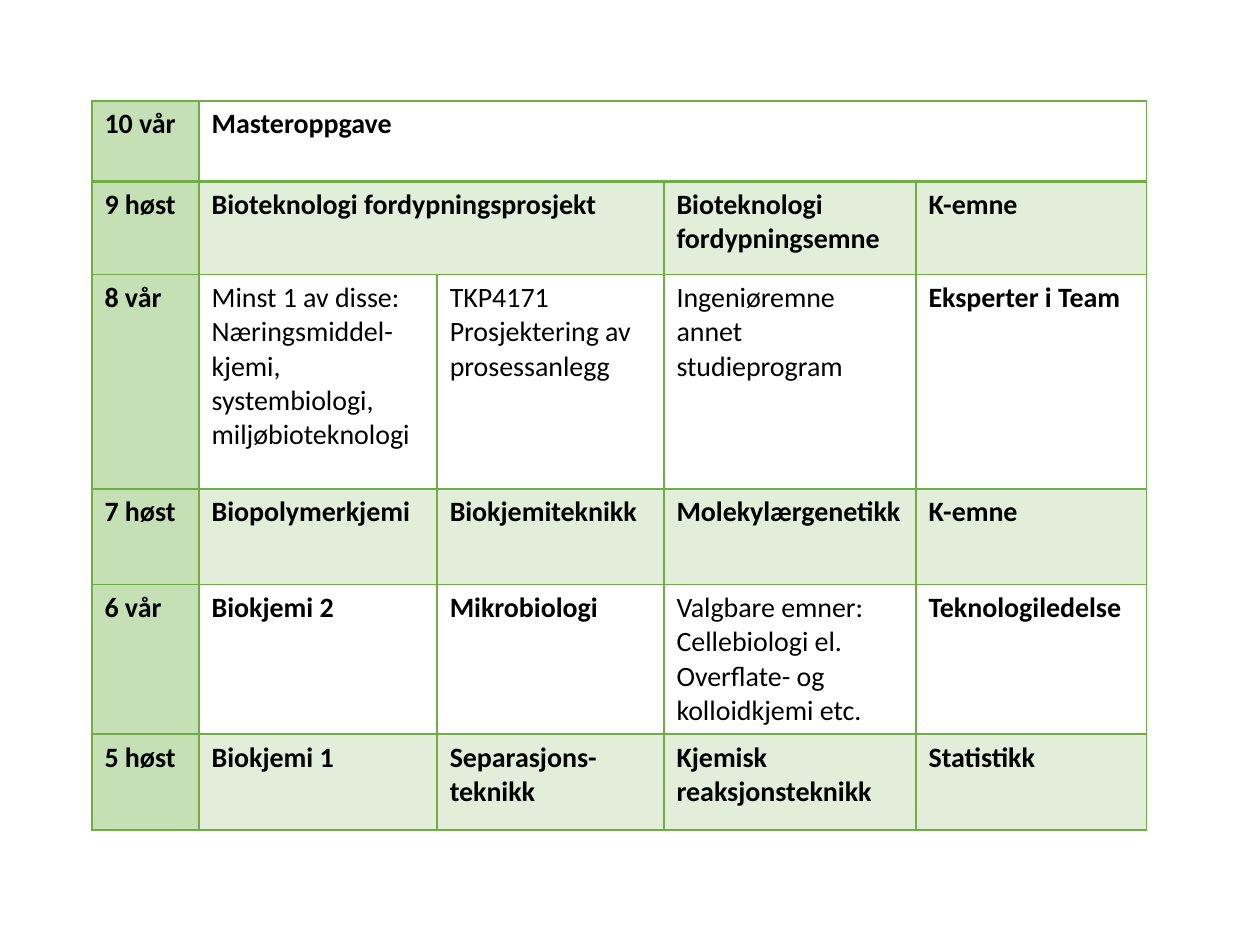
from dataclasses import dataclass

from lxml.etree import SubElement
from pptx import Presentation
from pptx.dml.color import RGBColor
from pptx.oxml.ns import qn
from pptx.util import Inches, Pt


@dataclass(frozen=True)
class Theme:
    font: str = "Calibri"
    size: int = 16
    ink: str = "000000"
    green: str = "70AD47"
    term: str = "C5E0B4"
    tint: int = 20
    thin: int = 1
    thick: int = 2


WIDTHS = [0.85, 1.89, 1.8, 2, 1.83]
PLAN = [
    (0.64, "10 vår", [("Masteroppgave", 4, True)]),
    (0.74, "9 høst", [("Bioteknologi fordypningsprosjekt", 2, True),
                      ("Bioteknologi fordypningsemne", 1, True),
                      ("K-emne", 1, True)]),
    (1.7, "8 vår", [("Minst 1 av disse: Næringsmiddel-kjemi, systembiologi, "
                     "miljøbioteknologi", 1, False),
                    ("TKP4171 Prosjektering av prosessanlegg", 1, False),
                    ("Ingeniøremne annet studieprogram", 1, False),
                    ("Eksperter i Team", 1, True)]),
    (0.76, "7 høst", [("Biopolymerkjemi", 1, True),
                      ("Biokjemiteknikk", 1, True),
                      ("Molekylærgenetikk", 1, True),
                      ("K-emne", 1, True)]),
    (1.18, "6 vår", [("Biokjemi 2", 1, True),
                     ("Mikrobiologi", 1, True),
                     ("Valgbare emner:\nCellebiologi el. Overflate- og "
                      "kolloidkjemi etc.", 1, False),
                     ("Teknologiledelse", 1, True)]),
    (0.76, "5 høst", [("Biokjemi 1", 1, True),
                      ("Separasjons-teknikk", 1, True),
                      ("Kjemisk reaksjonsteknikk", 1, True),
                      ("Statistikk", 1, True)]),
]


class Deck:
    """Hold the theme and the current slide, and draw each kind of element."""

    def __init__(self, theme):
        self.theme = theme
        self.prs = Presentation()
        self.prs.slide_width = Inches(10)
        self.prs.slide_height = Inches(7.5)
        self.slide = self.prs.slides.add_slide(self.prs.slide_layouts[6])

    def label(self, cell, text, bold):
        """Set each line of text as a paragraph with one run."""
        frame = cell.text_frame
        for num, line in enumerate(text.split("\n")):
            para = frame.add_paragraph() if num else frame.paragraphs[0]
            run = para.add_run()
            run.text = line
            font = run.font
            font.name, font.size, font.bold = self.theme.font, Pt(self.theme.size), bold
            font.color.rgb = RGBColor.from_string(self.theme.ink)

    def edge(self, cell, side, width):
        """Draw one green border of a cell."""
        props = cell._tc.get_or_add_tcPr()
        line = SubElement(props, qn(f"a:ln{side}"), w=str(Pt(width)))
        fill = SubElement(line, qn("a:solidFill"))
        SubElement(fill, qn("a:srgbClr"), val=self.theme.green)

    def paint(self, cell, color, alpha=100):
        """Fill a cell with a colour, or clear it when there is none."""
        if not color:
            cell.fill.background()
            return
        cell.fill.solid()
        cell.fill.fore_color.rgb = RGBColor.from_string(color)
        if alpha < 100:
            shade = cell._tc.tcPr.find(qn("a:solidFill")).find(qn("a:srgbClr"))
            SubElement(shade, qn("a:alpha"), val=str(alpha * 1000))

    def table(self, left, top, widths, plan):
        """Draw the study plan with a term column and shaded autumn rows."""
        theme = self.theme
        high = sum(row[0] for row in plan)
        grid = self.slide.shapes.add_table(
            len(plan), len(widths), Inches(left), Inches(top),
            Inches(sum(widths)), Inches(high)).table
        grid.first_row = grid.horz_banding = False
        for col, width in zip(grid.columns, widths):
            col.width = Inches(width)
        for r, (height, term, items) in enumerate(plan):
            grid.rows[r].height = Inches(height)
            for c in range(len(widths)):
                cell = grid.cell(r, c)
                for side in "LRTB":
                    heavy = (r, side) in [(0, "B"), (1, "T")]
                    self.edge(cell, side, theme.thick if heavy else theme.thin)
                if c == 0:
                    self.paint(cell, theme.term)
                else:
                    self.paint(cell, theme.green if r % 2 else None, theme.tint)
            self.label(grid.cell(r, 0), term, True)
            c = 1
            for text, span, bold in items:
                cell = grid.cell(r, c)
                if span > 1:
                    cell.merge(grid.cell(r, c + span - 1))
                self.label(cell, text, bold)
                c += span


def main():
    deck = Deck(Theme())
    deck.table(0.73, 0.8, WIDTHS, PLAN)
    deck.prs.save("out.pptx")


if __name__ == "__main__":
    main()
